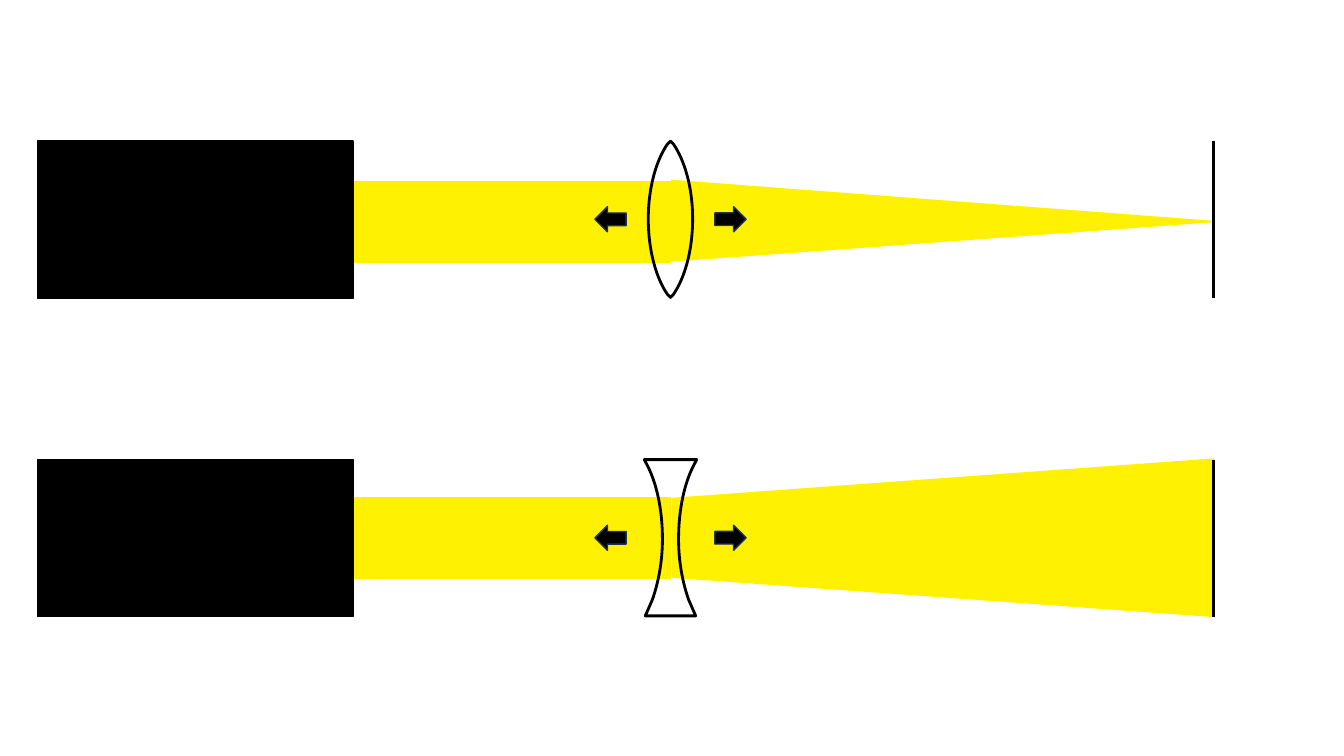
import pptx
import pptx.util
import pptx.dml.color
import pptx.enum.shapes
import lxml.etree

KIND = pptx.enum.shapes.MSO_SHAPE
SPACE = "{http://schemas.openxmlformats.org/drawingml/2006/main}"
BLACK, YELLOW, NAVY = "000000", "FFF101", "1E3256"
MID = 6.65
CONVEX = [
    (0, 0), (0.03, 0.03),
    (0.14, 0.19), (0.22, 0.46), (0.22, 0.77),
    (0.22, 1.09), (0.14, 1.36), (0.03, 1.52),
    (0, 1.55),
]
CONCAVE = [
    (0.26, 0), (0.25, 0.02),
    (0.14, 0.21), (0.08, 0.49), (0.08, 0.79),
    (0.08, 1.01), (0.12, 1.22), (0.18, 1.39),
    (0.25, 1.55),
]


def color(code):
    return pptx.dml.color.RGBColor.from_string(code)


class Canvas:
    def __init__(self, slide):
        self.slide = slide
        self.group = None

    def start(self):
        self.group = self.slide.shapes.add_group_shape().shapes

    def stroke(self, item, edge, width):
        item.line.color.rgb = color(edge)
        item.line.width = pptx.util.Pt(width)

    def shape(self, kind, box, fill, edge=None, **form):
        item = self.group.add_shape(kind, *map(pptx.util.Inches, box))
        item.shadow.inherit = False
        item.fill.solid()
        item.fill.fore_color.rgb = color(fill)
        self.stroke(item, edge or fill, 1)
        for key, value in form.items():
            setattr(item, key, value)
        return item

    def line(self, x, top, end):
        item = self.group.add_connector(
            pptx.enum.shapes.MSO_CONNECTOR.STRAIGHT,
            *map(pptx.util.Inches, (x, top, x, end)),
        )
        self.stroke(item, BLACK, 2.25)
        lxml.etree.SubElement(item._element.spPr, SPACE + "effectLst")

    def lens(self, half, top):
        left = [(-x, y) for x, y in reversed(half) if x]
        ring = [(MID + x, top + y) for x, y in half + left]
        dots = [tuple(map(pptx.util.Inches, dot)) for dot in ring]
        pen = self.group.build_freeform(*dots[0])
        pen.add_line_segments(dots[1:], close=True)
        item = pen.convert_to_shape()
        item.shadow.inherit = False
        item.fill.background()
        self.stroke(item, BLACK, 2)
        back = 10 if len(left) < len(half) else 11
        self.bend(item, (2, 5, back, back + 3))

    def bend(self, item, starts):
        legs = list(item._element.iter(SPACE + "lnTo"))
        for start in starts:
            trio = legs[start - 1:start + 2]
            curve = lxml.etree.Element(SPACE + "cubicBezTo")
            trio[0].addprevious(curve)
            for leg in trio:
                curve.append(leg[0])
                leg.getparent().remove(leg)

    def setup(self, top, gap, kind, cone, turn, half):
        self.start()
        self.shape(KIND.RECTANGLE, (3.52, top + gap, 3.13, 0.8), YELLOW)
        self.shape(KIND.RECTANGLE, (0.37, top, 3.13, 1.56), BLACK)
        beam = self.shape(kind, cone, YELLOW, rotation=turn)
        if kind == KIND.ISOSCELES_TRIANGLE:
            beam.adjustments[0] = 0.51
        self.line(12.04, top, top + 1.56)
        self.lens(half, top)
        for x, angle in ((7.09, 0), (5.9, 180)):
            box = (x, top + 0.65, 0.31, 0.25)
            self.shape(KIND.RIGHT_ARROW, box, BLACK, NAVY, rotation=angle)


def main():
    deck = pptx.Presentation()
    size = {"slide_width": 13.33, "slide_height": 7.5}
    for key, value in size.items():
        setattr(deck, key, pptx.util.Inches(value))
    canvas = Canvas(deck.slides.add_slide(deck.slide_layouts[6]))
    canvas.setup(1.4, 0.4, KIND.ISOSCELES_TRIANGLE, (8.95, -0.5, 0.8, 5.38), 90, CONVEX)
    canvas.setup(4.56, 0.38, KIND.TRAPEZOID, (8.57, 2.65, 1.56, 5.37), 270, CONCAVE)
    deck.save("out.pptx")


if __name__ == "__main__":
    main()
